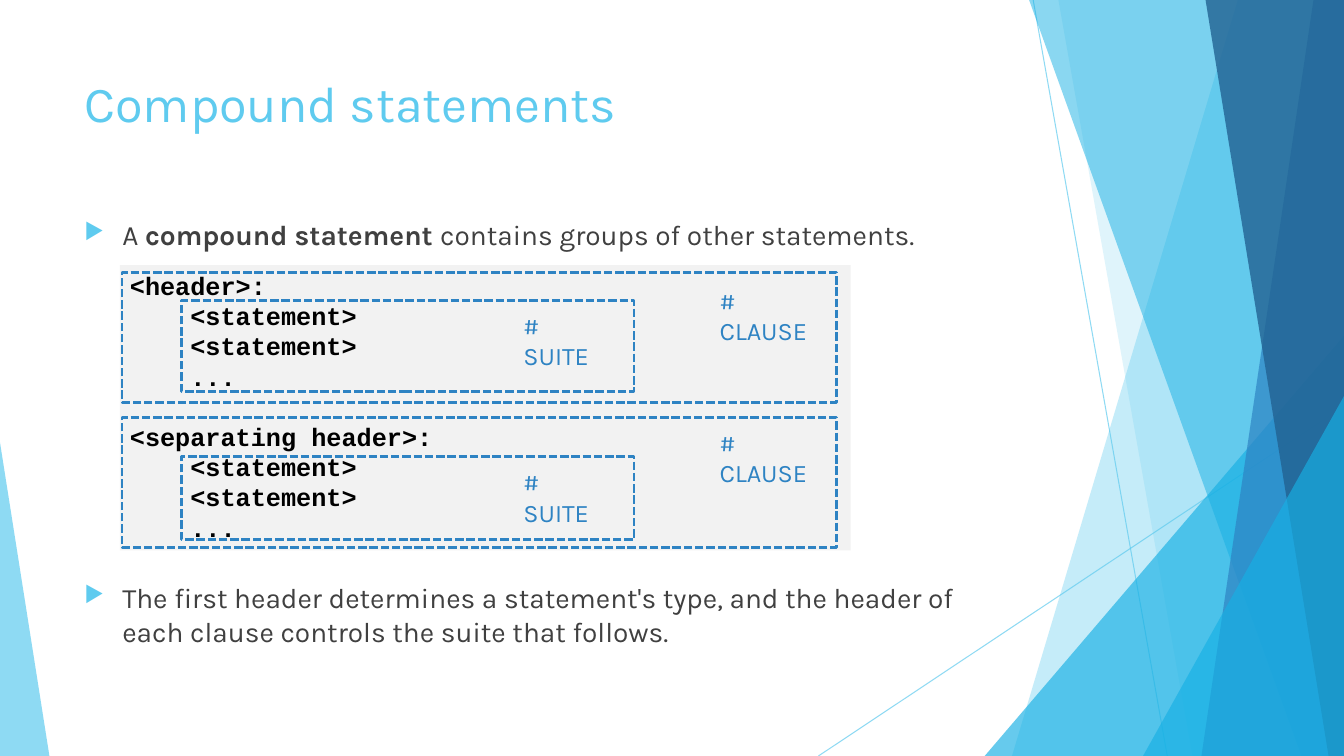
from dataclasses import dataclass
from lxml.etree import SubElement
from pptx import Presentation
from pptx.dml.color import RGBColor
from pptx.enum.dml import MSO_LINE
from pptx.enum.shapes import MSO_CONNECTOR, MSO_SHAPE
from pptx.enum.text import MSO_ANCHOR as Anchor, PP_ALIGN as Align
from pptx.oxml.ns import qn
from pptx.util import Pt

WIDTH, HEIGHT = 960, 540


@dataclass(frozen=True)
class Theme:
    sky: str = "5FCBEF"
    cyan: str = "17B0E4"
    blue: str = "2E83C3"
    navy: str = "226292"
    body: str = "404040"
    code: str = "000000"
    panel: str = "F2F2F2"
    font: str = "Karla"
    code_font: str = "Courier New"
    title_size: int = 36
    body_size: int = 20
    small_size: int = 18
    code_line: float = 21.6
    code_indent: float = 43.2


def set_alpha(color_parent, percent):
    color = color_parent.find(".//" + qn("a:srgbClr"))
    SubElement(color, qn("a:alpha"), val=str(percent * 1000))


def add_run(paragraph, text, *, size, font, color, bold=False):
    run = paragraph.add_run()
    run.text = text
    run.font.size = Pt(size)
    run.font.name = font
    run.font.bold = bold
    run.font.color.rgb = RGBColor.from_string(color)


class SlideBuilder:
    def __init__(self, slide, theme):
        self.slide = slide
        self.shapes = slide.shapes
        self.theme = theme

    def paint(self, shape, color, alpha=100):
        shape.shadow.inherit = False
        shape.fill.solid()
        shape.fill.fore_color.rgb = RGBColor.from_string(color)
        shape.line.fill.background()
        if alpha < 100:
            set_alpha(shape.fill._xPr.find(qn("a:solidFill")), alpha)

    def hairline(self, start, end):
        line = self.shapes.add_connector(
            MSO_CONNECTOR.STRAIGHT, *map(Pt, start + end))
        line.line.width = Pt(0.75)
        line.line.color.rgb = RGBColor.from_string(self.theme.sky)
        properties = line._element.spPr
        set_alpha(properties, 70)
        SubElement(properties, qn("a:effectLst"))

    def band(self, top_x, bottom_x, color, alpha):
        """Fill from a slanted left edge to the right side of the slide."""
        builder = self.shapes.build_freeform(Pt(top_x), 0)
        corners = [(WIDTH, 0), (WIDTH, HEIGHT), (bottom_x, HEIGHT)]
        builder.add_line_segments([(Pt(x), Pt(y)) for x, y in corners])
        self.paint(builder.convert_to_shape(), color, alpha)

    def corner(self, left, top, width, apex, color, alpha):
        """Stand a triangle on the bottom edge; apex is 0 (left) to 1 (right)."""
        shape = self.shapes.add_shape(
            MSO_SHAPE.ISOSCELES_TRIANGLE, *map(Pt, (left, top, width, HEIGHT - top)))
        shape.adjustments[0] = apex
        self.paint(shape, color, alpha)

    def text(self, box, *pieces, size, color, bullet=False):
        """Write one paragraph from (text, bold) pieces."""
        frame = self.shapes.add_textbox(*map(Pt, box)).text_frame
        frame.word_wrap = True
        paragraph = frame.paragraphs[0]
        for words, bold in pieces:
            add_run(paragraph, words, size=size, font=self.theme.font,
                    color=color, bold=bold)
        if bullet:
            properties = paragraph._p.get_or_add_pPr()
            properties.set("marL", str(Pt(27)))
            properties.set("indent", str(Pt(-27)))
            bullet_color = SubElement(properties, qn("a:buClr"))
            SubElement(bullet_color, qn("a:srgbClr"), val=self.theme.sky)
            SubElement(properties, qn("a:buSzPct"), val="80000")
            SubElement(properties, qn("a:buChar"), char="▶")

    def code_panel(self, box, clauses):
        theme = self.theme
        shape = self.shapes.add_shape(MSO_SHAPE.RECTANGLE, *map(Pt, box))
        self.paint(shape, theme.panel)
        frame = shape.text_frame
        frame.vertical_anchor = Anchor.TOP
        lines = [(number, line, text) for number, clause in enumerate(clauses)
                 for line, text in enumerate(clause)]
        for number, line, text in lines:
            first = number == line == 0
            paragraph = frame.paragraphs[0] if first else frame.add_paragraph()
            paragraph.alignment = Align.LEFT
            paragraph.line_spacing = Pt(theme.code_line)
            if line:
                indent = str(Pt(theme.code_indent))
                paragraph._p.get_or_add_pPr().set("marL", indent)
            elif number:
                paragraph.space_before = Pt(theme.code_line)
            add_run(paragraph, text, size=theme.small_size,
                    font=theme.code_font, color=theme.code, bold=True)

    def dashed_box(self, box):
        shape = self.shapes.add_shape(MSO_SHAPE.RECTANGLE, *map(Pt, box))
        shape.shadow.inherit = False
        shape.fill.background()
        shape.line.color.rgb = RGBColor.from_string(self.theme.blue)
        shape.line.width = Pt(2)
        shape.line.dash_style = MSO_LINE.SQUARE_DOT

    def label(self, left, top, width, text):
        self.text((left, top, width, 28.8), (text, False),
                  size=self.theme.small_size, color=self.theme.blue)


def draw_background(builder):
    theme = builder.theme
    builder.hairline((738, 0), (833.8, HEIGHT))
    builder.hairline((WIDTH, 290.2), (584.6, HEIGHT))
    builder.band(884.2, 722.9, theme.sky, 36)
    builder.band(756, 851.8, theme.sky, 20)
    builder.corner(703.4, 239.8, 256.6, 1, theme.cyan, 66)
    builder.band(735.1, 929.5, theme.cyan, 50)
    builder.band(938.2, 858.2, theme.blue, 70)
    builder.band(861.1, 949, theme.navy, 80)
    builder.corner(816.5, 283, 143.5, 1, theme.cyan, 66)
    builder.corner(0, 316.1, 35.3, 0, theme.sky, 70)


def draw_content(builder):
    theme = builder.theme
    body = dict(size=theme.body_size, color=theme.body, bullet=True)
    builder.text((53.3, 48.2, 676.8, 103.7), ("Compound statements", False),
                 size=theme.title_size, color=theme.sky)
    builder.text((53.3, 151.9, 676.8, 37.4), ("A ", False),
                 ("compound statement ", True),
                 ("contains groups of other statements.", False), **body)

    suite = ["<statement>", "<statement>", "..."]
    builder.code_panel((85.7, 189.4, 522, 203.8),
                       [["<header>:", *suite], ["<separating header>:", *suite]])
    # Tops of clause box, clause label, suite box and suite label; suite height
    for clause, clause_label, suite_top, suite_label, suite_height in (
            (194.4, 200.2, 214.6, 218.2, 64.8),
            (298.1, 301.7, 326.2, 329.8, 59)):
        builder.dashed_box((87.1, clause, 510.5, 92.9))
        builder.label(506.9, clause_label, 90, "# CLAUSE")
        builder.dashed_box((129.6, suite_top, 323.3, suite_height))
        builder.label(366.8, suite_label, 74, "# SUITE")

    builder.text((53.3, 411.1, 676.8, 94.3),
                 ("The first header determines a statement's type, and the header "
                  "of each clause controls the suite that follows.", False), **body)


def main():
    presentation = Presentation()
    presentation.slide_width, presentation.slide_height = Pt(WIDTH), Pt(HEIGHT)
    slide = presentation.slides.add_slide(presentation.slide_layouts[6])
    builder = SlideBuilder(slide, Theme())
    draw_background(builder)
    draw_content(builder)
    presentation.save("out.pptx")


if __name__ == "__main__":
    main()
